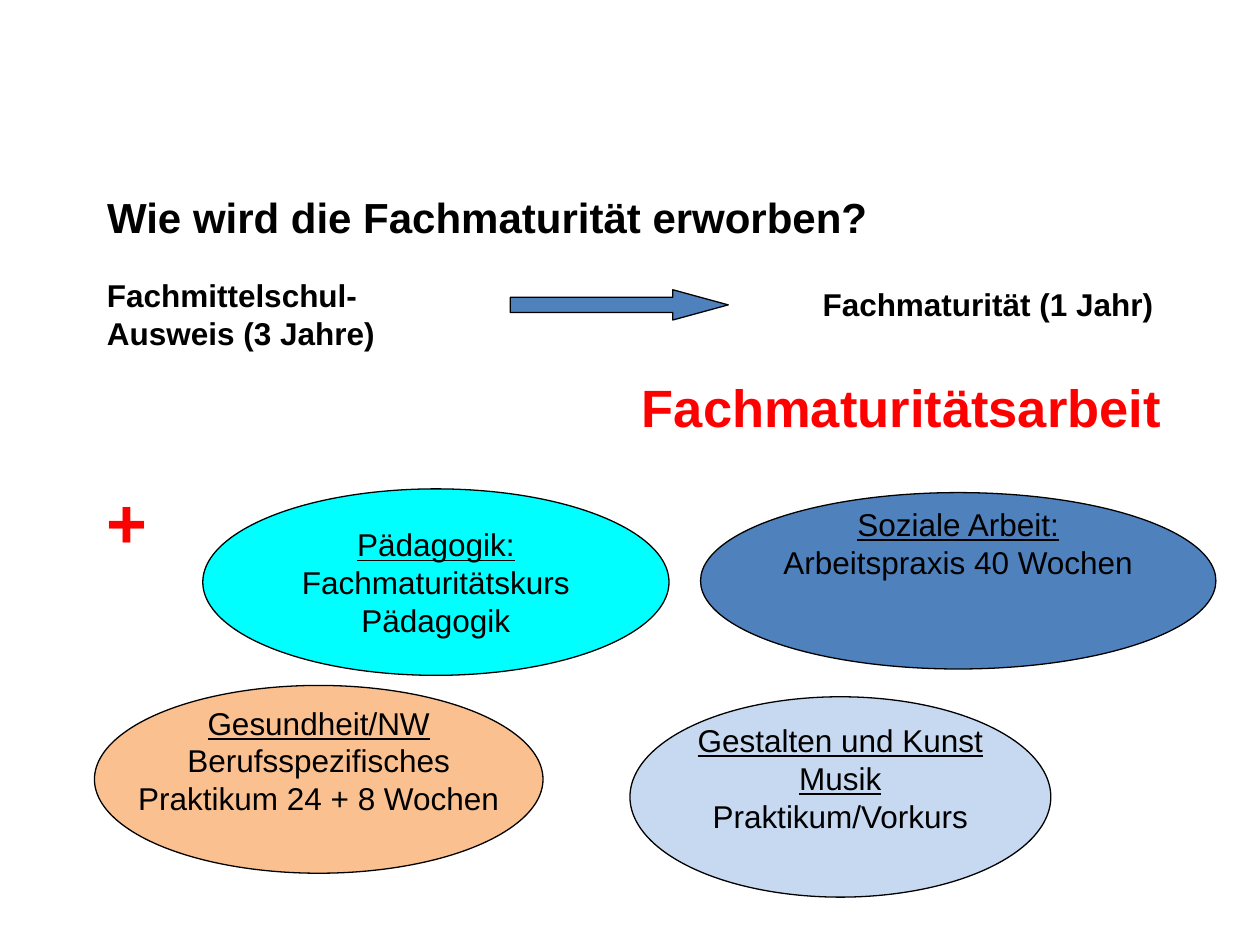
from dataclasses import dataclass

from pptx import Presentation
from pptx.dml.color import RGBColor
from pptx.enum.shapes import MSO_SHAPE as Shape
from pptx.enum.text import MSO_ANCHOR as Anchor, MSO_AUTO_SIZE as AutoSize, PP_ALIGN as Align
from pptx.util import Pt

EMU_PER_PX = 9144


def px(length):
    return length * EMU_PER_PX


@dataclass(frozen=True)
class Theme:
    font: str = "Arial"
    ink: str = "000000"
    accent: str = "FF0000"
    blue: str = "4F81BD"
    cyan: str = "00FFFF"
    orange: str = "FAC090"
    pale_blue: str = "C6D9F1"
    title: int = 24
    body: int = 18
    headline: int = 30
    plus: int = 40
    outline: float = 0.75
    inset: int = 5
    line_height: int = 30


class SlideBuilder:
    def __init__(self, slide, theme):
        self.slide = slide
        self.theme = theme

    def format(self, paragraph, size, color, align=Align.LEFT, bold=False, underline=False):
        paragraph.alignment = align
        for run in paragraph.runs:
            font = run.font
            font.name = self.theme.font
            font.size = Pt(size)
            font.bold = bold
            font.underline = underline
            font.color.rgb = RGBColor.from_string(color)

    def title(self, text, box):
        shape = self.slide.shapes.title
        shape.left, shape.top, shape.width, shape.height = map(px, box)
        frame = shape.text_frame
        frame.text = text
        frame.vertical_anchor = Anchor.TOP
        frame.auto_size = AutoSize.NONE
        self.format(frame.paragraphs[0], self.theme.title, self.theme.ink, bold=True)

    def text(self, text, box):
        frame = self.slide.shapes.add_textbox(*map(px, box)).text_frame
        frame.word_wrap = True
        frame.text = text
        for paragraph in frame.paragraphs:
            self.format(paragraph, self.theme.body, self.theme.ink, bold=True)
        return frame

    def shape(self, kind, box, fill):
        shape = self.slide.shapes.add_shape(kind, *map(px, box))
        shape.shadow.inherit = False
        shape.fill.solid()
        shape.fill.fore_color.rgb = RGBColor.from_string(fill)
        shape.line.color.rgb = RGBColor.from_string(self.theme.ink)
        shape.line.width = Pt(self.theme.outline)
        return shape

    def arrow(self, box, head_ratio):
        shape = self.shape(Shape.RIGHT_ARROW, box, self.theme.blue)
        shape.adjustments[1] = head_ratio

    def ellipse(self, headings, details, box, fill, lines_below=0):
        frame = self.shape(Shape.OVAL, box, fill).text_frame
        frame.word_wrap = False
        frame.vertical_anchor = Anchor.MIDDLE
        frame.margin_bottom = px(self.theme.inset + lines_below * self.theme.line_height)
        frame.text = "\n".join(headings + details)
        for index, paragraph in enumerate(frame.paragraphs):
            self.format(paragraph, self.theme.body, self.theme.ink, Align.CENTER,
                        underline=index < len(headings))


def main():
    theme = Theme()
    presentation = Presentation()
    presentation.slide_width, presentation.slide_height = px(1000), px(750)
    slide = presentation.slides.add_slide(presentation.slide_layouts[5])
    builder = SlideBuilder(slide, theme)

    builder.title("Wie wird die Fachmaturität erworben?", (75, 147, 821, 50))
    builder.text("Fachmittelschul-Ausweis (3 Jahre)", (75, 214, 268, 70))
    builder.arrow((405, 230, 173, 24), 1.83)
    builder.text("Fachmaturität (1 Jahr)", (643, 221, 322, 40))

    requirement = builder.text("Fachmaturitätsarbeit \n+", (75, 293, 868, 162))
    headline, plus = requirement.paragraphs
    builder.format(headline, theme.headline, theme.accent, Align.RIGHT, bold=True)
    builder.format(plus, theme.plus, theme.accent, bold=True)
    plus.space_before = Pt(23)

    fields = [
        (["Pädagogik:"], ["Fachmaturitätskurs", "Pädagogik"],
         (161, 388, 370, 148), theme.cyan, 0),
        (["Gesundheit/NW"], ["Berufsspezifisches", "Praktikum 24 + 8 Wochen"],
         (75, 544, 356, 149), theme.orange, 1),
        (["Gestalten und Kunst", "Musik"], ["Praktikum/Vorkurs"],
         (500, 553, 334, 159), theme.pale_blue, 1),
        (["Soziale Arbeit:"], ["Arbeitspraxis 40 Wochen"],
         (556, 391, 409, 140), theme.blue, 2),
    ]
    for field in fields:
        builder.ellipse(*field)

    presentation.save("out.pptx")


if __name__ == "__main__":
    main()
